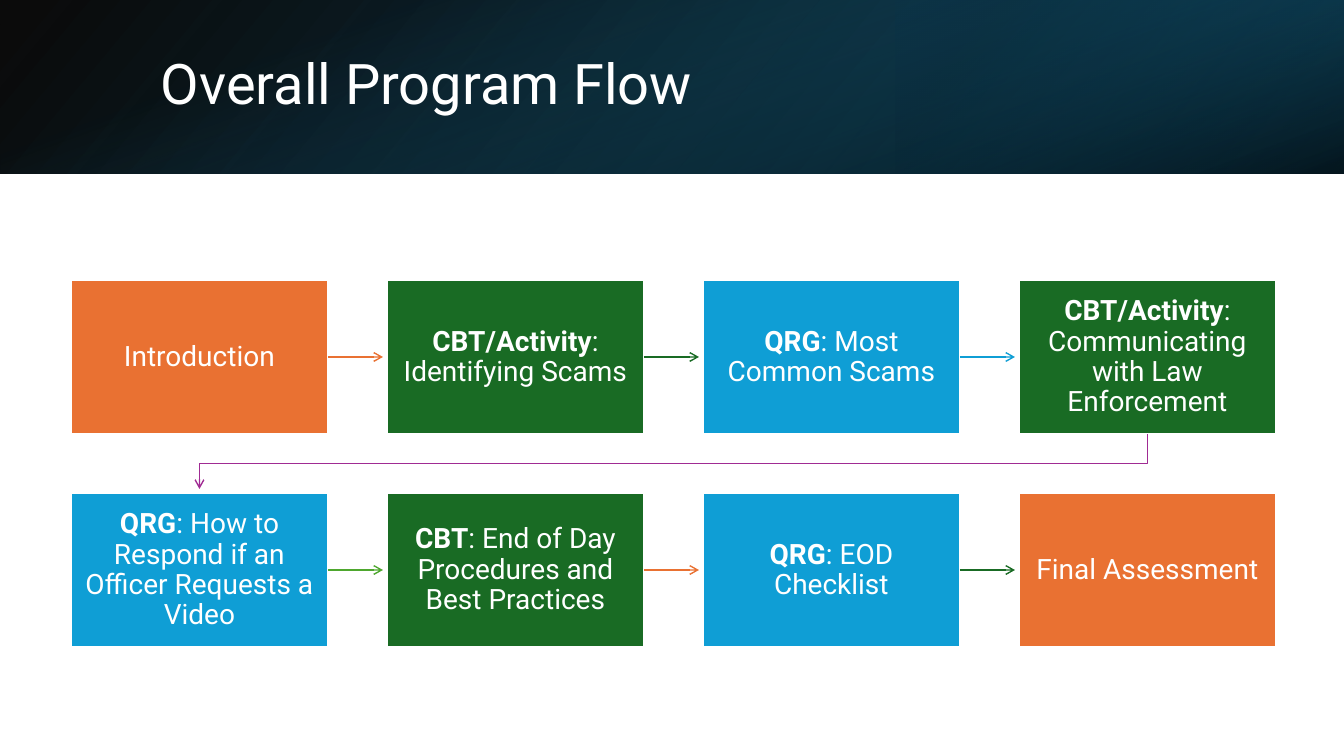
from dataclasses import dataclass
from typing import NamedTuple

import pptx
import pptx.dml.color
import pptx.enum.shapes
import pptx.enum.text
import pptx.oxml
import pptx.oxml.ns
import pptx.util

EMU_PER_PX = 914400 / 100.8


@dataclass(frozen=True)
class Theme:
    font: str = "Roboto"
    title_size: int = 40
    step_size: int = 20
    border_width: float = 1.5
    arrow_width: float = 1
    white: str = "FFFFFF"
    black: str = "000000"
    orange: str = "E97132"
    green: str = "196B24"
    blue: str = "0F9ED5"
    purple: str = "A02B93"
    lime: str = "4EA72E"
    teal: str = "156082"
    teal_dark: str = "104862"
    teal_deep: str = "0B3041"


THEME = Theme()


class Frame(NamedTuple):
    left: int
    top: int
    width: int
    height: int


class Stop(NamedTuple):
    position: int
    color: str
    opacity: int


class BannerLayer(NamedTuple):
    frame: Frame
    stops: tuple[Stop, ...]
    angle: int
    rotation: int
    flipped: bool


class Step(NamedTuple):
    kind: str
    topic: str
    fill: str
    arrow: str | None  # colour of the arrow to the next step in the row


SLIDE_WIDTH, SLIDE_HEIGHT, BANNER_HEIGHT = 1344, 756, 174
BANNER_OFFSET = (SLIDE_WIDTH - BANNER_HEIGHT) // 2
BANNER = (
    BannerLayer(Frame(0, 0, SLIDE_WIDTH, BANNER_HEIGHT),
                (Stop(0, THEME.black, 96), Stop(100, THEME.teal_dark, 100)), 140, 0, True),
    BannerLayer(Frame(896, 0, 448, BANNER_HEIGHT),
                (Stop(19, THEME.teal_deep, 68), Stop(100, THEME.teal, 79)), 320, 180, True),
    BannerLayer(Frame(BANNER_OFFSET, -BANNER_OFFSET, BANNER_HEIGHT, SLIDE_WIDTH),
                (Stop(23, THEME.teal, 0), Stop(99, THEME.black, 74)), 340, 90, False),
)
TITLE = Frame(151, 38, 1107, 97)

FIRST_STEP = Frame(71, 280, 257, 154)
COLUMN_PITCH, ROW_PITCH = 316, 213
ARROW_GAP = 4
INSET_X, INSET_Y = 12, 13
PROGRAM = (
    (
        Step("", "Introduction", THEME.orange, THEME.orange),
        Step("CBT/Activity", ": Identifying Scams", THEME.green, THEME.green),
        Step("QRG", ": Most Common Scams", THEME.blue, THEME.blue),
        Step("CBT/Activity", ": Communicating with Law Enforcement", THEME.green, None),
    ),
    (
        Step("QRG", ": How to Respond if an Officer Requests a Video", THEME.blue, THEME.lime),
        Step("CBT", ": End of Day Procedures and Best Practices", THEME.green, THEME.orange),
        Step("QRG", ": EOD Checklist", THEME.blue, THEME.green),
        Step("", "Final Assessment", THEME.orange, None),
    ),
)


def px(length: float) -> int:
    return round(length * EMU_PER_PX)


def rgb(color: str) -> pptx.dml.color.RGBColor:
    return pptx.dml.color.RGBColor.from_string(color)


def add_rectangle(slide, frame: Frame):
    rectangle = slide.shapes.add_shape(
        pptx.enum.shapes.MSO_SHAPE.RECTANGLE, *map(px, frame))
    rectangle.shadow.inherit = False
    return rectangle


def add_run(paragraph, text: str, size: int, bold: bool = False) -> None:
    run = paragraph.add_run()
    run.text = text
    run.font.name = THEME.font
    run.font.size = pptx.util.Pt(size)
    run.font.bold = bold
    run.font.color.rgb = rgb(THEME.white)


def draw_banner_layer(slide, layer: BannerLayer) -> None:
    band = add_rectangle(slide, layer.frame)
    band.line.fill.background()
    band.rotation = layer.rotation
    properties = band.element.spPr
    if layer.flipped:
        properties.find(pptx.oxml.ns.qn("a:xfrm")).set("flipH", "1")
    stops = "".join(
        f'<a:gs pos="{stop.position * 1000}"><a:srgbClr val="{stop.color}">'
        f'<a:alpha val="{stop.opacity * 1000}"/></a:srgbClr></a:gs>'
        for stop in layer.stops)
    gradient = pptx.oxml.parse_xml(
        f'<a:gradFill {pptx.oxml.ns.nsdecls("a")} rotWithShape="1"><a:gsLst>{stops}</a:gsLst>'
        f'<a:lin ang="{layer.angle * 60000}" scaled="0"/></a:gradFill>')
    properties.find(pptx.oxml.ns.qn("a:prstGeom")).addnext(gradient)


def draw_title(slide) -> None:
    title = slide.shapes.add_textbox(*map(px, TITLE)).text_frame
    title.word_wrap = True
    title.vertical_anchor = pptx.enum.text.MSO_ANCHOR.MIDDLE
    title.paragraphs[0].line_spacing = 0.9
    add_run(title.paragraphs[0], "Overall Program Flow", THEME.title_size)


def draw_step(slide, step: Step, frame: Frame):
    box = add_rectangle(slide, frame)
    box.fill.solid()
    box.fill.fore_color.rgb = rgb(step.fill)
    box.line.color.rgb = rgb(THEME.white)
    box.line.width = pptx.util.Pt(THEME.border_width)
    label = box.text_frame
    label.word_wrap = True
    label.vertical_anchor = pptx.enum.text.MSO_ANCHOR.MIDDLE
    label.margin_left = label.margin_right = px(INSET_X)
    label.margin_top = label.margin_bottom = px(INSET_Y)
    paragraph = label.paragraphs[0]
    paragraph.alignment = pptx.enum.text.PP_ALIGN.CENTER
    paragraph.line_spacing = 0.9
    if step.kind:
        add_run(paragraph, step.kind, THEME.step_size, bold=True)
    add_run(paragraph, step.topic, THEME.step_size)
    return box


def style_arrow(arrow, color: str) -> None:
    """Colour the line and give its end an open arrowhead."""
    arrow.line.color.rgb = rgb(color)
    arrow.line.width = pptx.util.Pt(THEME.arrow_width)
    arrow.line._get_or_add_ln().append(
        pptx.oxml.parse_xml(f'<a:tailEnd {pptx.oxml.ns.nsdecls("a")} type="arrow"/>'))


def draw_step_arrow(slide, box, frame: Frame, color: str) -> None:
    middle = px(frame.top + frame.height / 2)
    arrow = slide.shapes.add_connector(
        pptx.enum.shapes.MSO_CONNECTOR.STRAIGHT, px(frame.left + frame.width), middle,
        px(frame.left + COLUMN_PITCH - ARROW_GAP), middle)
    arrow.begin_connect(box, 3)
    style_arrow(arrow, color)
    arrow.element.spPr.append(
        pptx.oxml.parse_xml(f'<a:effectLst {pptx.oxml.ns.nsdecls("a")}/>'))


def draw_row_return(slide) -> None:
    """Lead from the last step of the first row to the first of the second."""
    start_x = FIRST_STEP.left + FIRST_STEP.width / 2
    last_x = start_x + COLUMN_PITCH * (len(PROGRAM[0]) - 1)
    bottom = FIRST_STEP.top + FIRST_STEP.height
    next_top = FIRST_STEP.top + ROW_PITCH
    turn = (bottom + next_top) / 2
    corners = [(last_x, turn), (start_x, turn), (start_x, next_top - ARROW_GAP)]
    builder = slide.shapes.build_freeform(px(last_x), px(bottom))
    builder.add_line_segments([(px(x), px(y)) for x, y in corners], close=False)
    route = builder.convert_to_shape()
    route.shadow.inherit = False
    route.fill.background()
    style_arrow(route, THEME.purple)


def main() -> None:
    deck = pptx.Presentation()
    deck.slide_width, deck.slide_height = px(SLIDE_WIDTH), px(SLIDE_HEIGHT)
    slide = deck.slides.add_slide(deck.slide_layouts[6])
    for layer in BANNER:
        draw_banner_layer(slide, layer)
    draw_title(slide)
    for row, steps in enumerate(PROGRAM):
        for column, step in enumerate(steps):
            frame = FIRST_STEP._replace(left=FIRST_STEP.left + column * COLUMN_PITCH,
                                        top=FIRST_STEP.top + row * ROW_PITCH)
            box = draw_step(slide, step, frame)
            if step.arrow:
                draw_step_arrow(slide, box, frame, step.arrow)
    draw_row_return(slide)
    deck.save("out.pptx")


if __name__ == "__main__":
    main()
